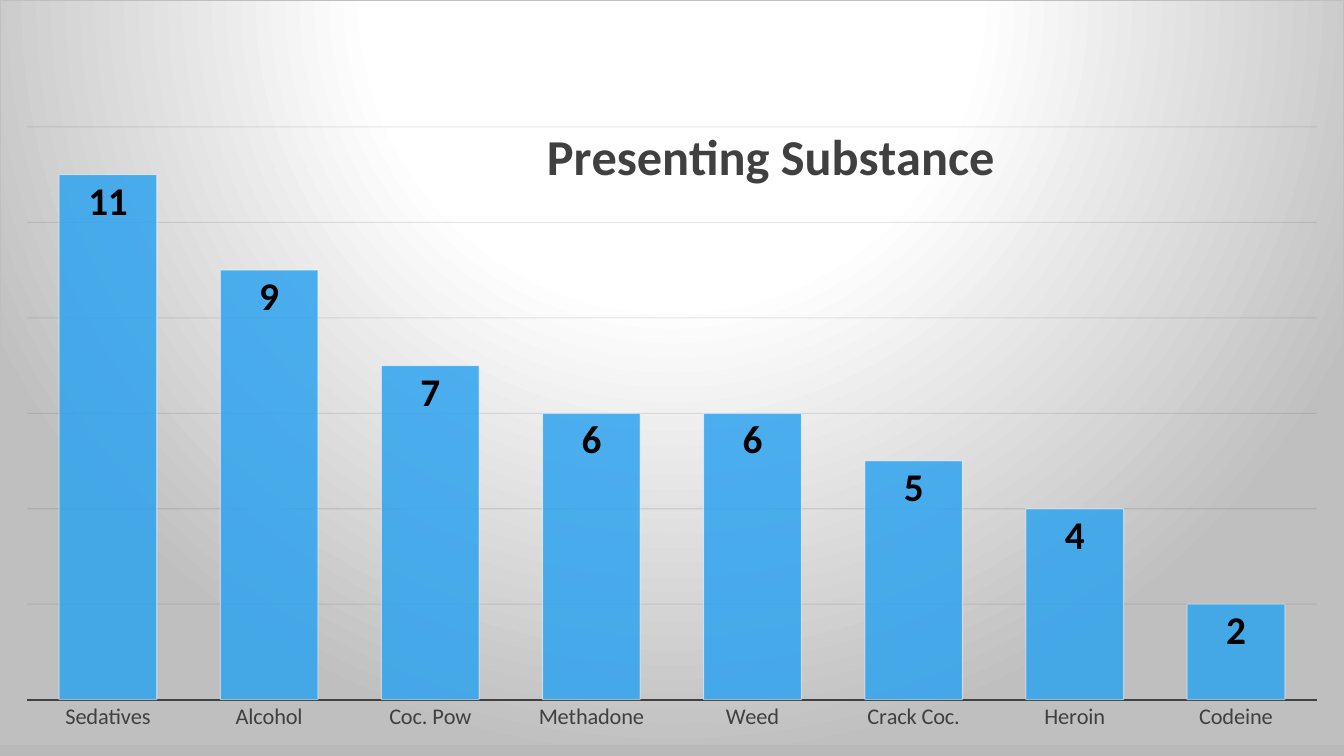
from lxml.etree import SubElement, fromstring
from pptx import Presentation
from pptx.chart.data import CategoryChartData
from pptx.dml.color import RGBColor
from pptx.enum.chart import XL_CHART_TYPE, XL_LABEL_POSITION, XL_TICK_LABEL_POSITION, XL_TICK_MARK
from pptx.oxml.ns import nsdecls, qn
from pptx.util import Inches, Pt

TITLE = "Presenting Substance"
COUNTS = {
    "Sedatives": 11,
    "Alcohol": 9,
    "Coc. Pow": 7,
    "Methadone": 6,
    "Weed": 6,
    "Crack Coc.": 5,
    "Heroin": 4,
    "Codeine": 2,
}
FONT = "Calibri"
BACKDROP = ["FFFFFF", "B9B9B9"]
CHART_STOPS = [(0, "FFFFFF"), (39, "FFFFFF"), (100, "BFBFBF")]
PLOT_LAYOUT = {"x": 0.02, "y": 0.17, "w": 0.96, "h": 0.77}
TITLE_LAYOUT = {"x": 0.4, "y": 0.15}


def color(value):
    return RGBColor.from_string(value)


def set_font(font, size, fill="404040", bold=False):
    font.name, font.size, font.bold = FONT, Pt(size), bold
    font.color.rgb = color(fill)


def add_text(tf, text, **style):
    r = tf.paragraphs[0].add_run()
    r.text = text
    set_font(r.font, **style)


def set_line(line, fill, width=0.75, alpha=100):
    line.color.rgb = color(fill)
    line.width = Pt(width)
    set_alpha(line.fill, alpha, line._ln)


def set_alpha(fill, alpha, element):
    if alpha < 100:
        clr = next(element.iter(qn("a:srgbClr")))
        SubElement(clr, qn("a:alpha")).set("val", str(alpha * 1000))


def set_layout(parent, index, places, inner=False):
    for old in parent.findall(qn("c:layout")):
        parent.remove(old)
    layout = parent.makeelement(qn("c:layout"), {})
    manual = SubElement(layout, qn("c:manualLayout"))
    if inner:
        SubElement(manual, qn("c:layoutTarget")).set("val", "inner")
    for side in "xy":
        SubElement(manual, qn(f"c:{side}Mode")).set("val", "edge")
    for key, value in places.items():
        SubElement(manual, qn(f"c:{key}")).set("val", str(value))
    parent.insert(index, layout)


def set_chart_area(chart):
    stops = "".join(
        f'<a:gs pos="{pos * 1000}"><a:srgbClr val="{clr}"/></a:gs>' for pos, clr in CHART_STOPS
    )
    area = fromstring(
        f'<c:spPr {nsdecls("c", "a")}><a:gradFill><a:gsLst>{stops}</a:gsLst>'
        '<a:path path="circle"><a:fillToRect l="50000" t="-80000" r="50000" b="180000"/></a:path>'
        '</a:gradFill><a:ln w="9525"><a:solidFill><a:srgbClr val="BFBFBF"/></a:solidFill></a:ln></c:spPr>'
    )
    chart._chartSpace.find(qn("c:chart")).addnext(area)


prs = Presentation()
prs.slide_width, prs.slide_height = Inches(13.33), Inches(7.5)
s = prs.slides.add_slide(prs.slide_layouts[6])
backdrop = s.background.fill
backdrop.gradient()
backdrop.gradient_angle = 270
for stop, clr in zip(backdrop.gradient_stops, BACKDROP):
    stop.color.rgb = color(clr)

data = CategoryChartData()
data.categories = list(COUNTS)
data.add_series("Series 1", list(COUNTS.values()))
chart = s.shapes.add_chart(
    XL_CHART_TYPE.COLUMN_CLUSTERED, 0, 0, Inches(13.33), Inches(7.39), data
).chart
set_font(chart.font, 10, "000000")
set_chart_area(chart)
chart.has_legend = False
add_text(chart.chart_title.text_frame, TITLE, size=36, bold=True)
chart.chart_title.include_in_layout = True
set_layout(chart.chart_title._element, 1, TITLE_LAYOUT)
set_layout(chart._chartSpace.chart.plotArea, 0, PLOT_LAYOUT, inner=True)

cat_axis = chart.category_axis
cat_axis.major_tick_mark = XL_TICK_MARK.NONE
set_font(cat_axis.tick_labels.font, 16)
set_line(cat_axis.format.line, "404040", 1.5)

val_axis = chart.value_axis
val_axis.minimum_scale, val_axis.maximum_scale, val_axis.major_unit = 0, 12, 2
val_axis.tick_label_position = XL_TICK_LABEL_POSITION.NONE
val_axis.visible = False
val_axis.has_major_gridlines = True
set_line(val_axis.major_gridlines.format.line, "0D0D0D", alpha=10)

plot = chart.plots[0]
plot.gap_width = 65
plot.vary_by_categories = False
bars = plot.series[0]
bars.format.fill.solid()
bars.format.fill.fore_color.rgb = color("2FA3EE")
set_alpha(bars.format.fill, 85, bars._element.spPr)
set_line(bars.format.line, "FFFFFF", alpha=50)
labels = bars.data_labels
labels.show_value = True
labels.position = XL_LABEL_POSITION.INSIDE_END
set_font(labels.font, 28, "000000", bold=True)

prs.save("out.pptx")
